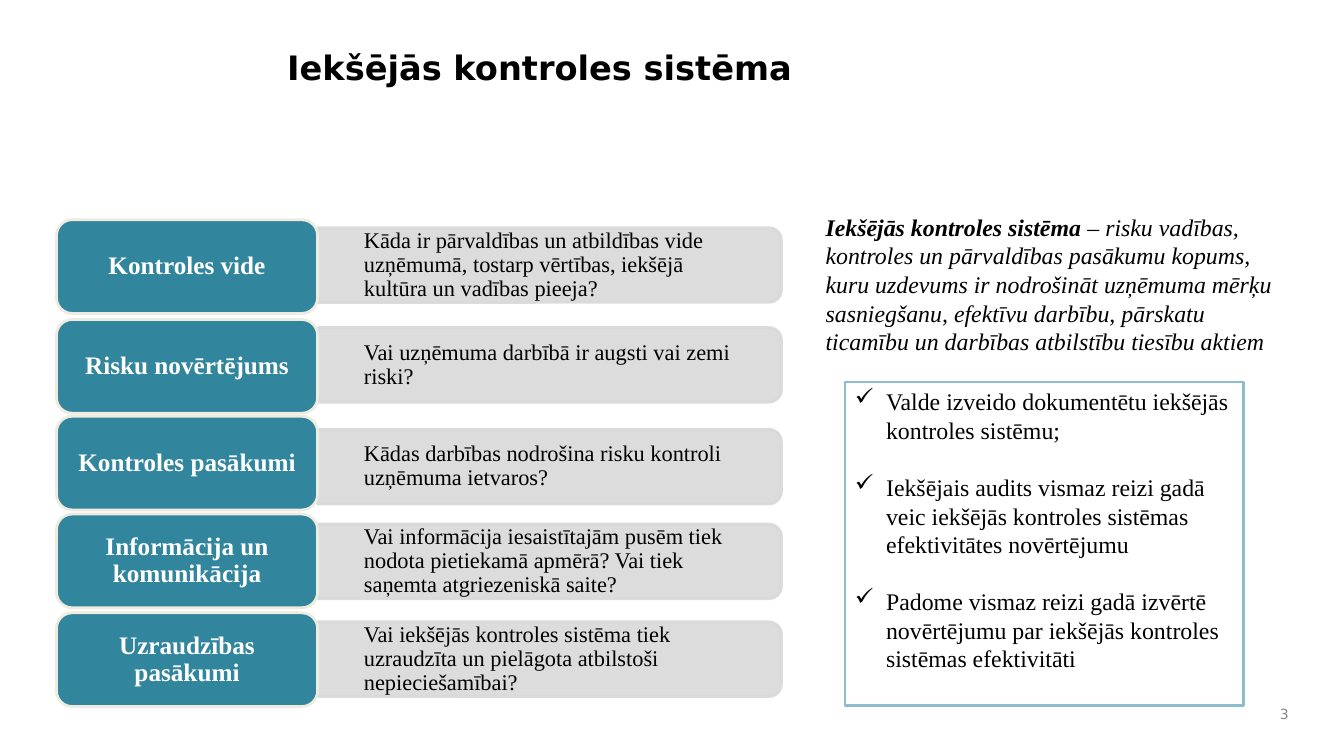
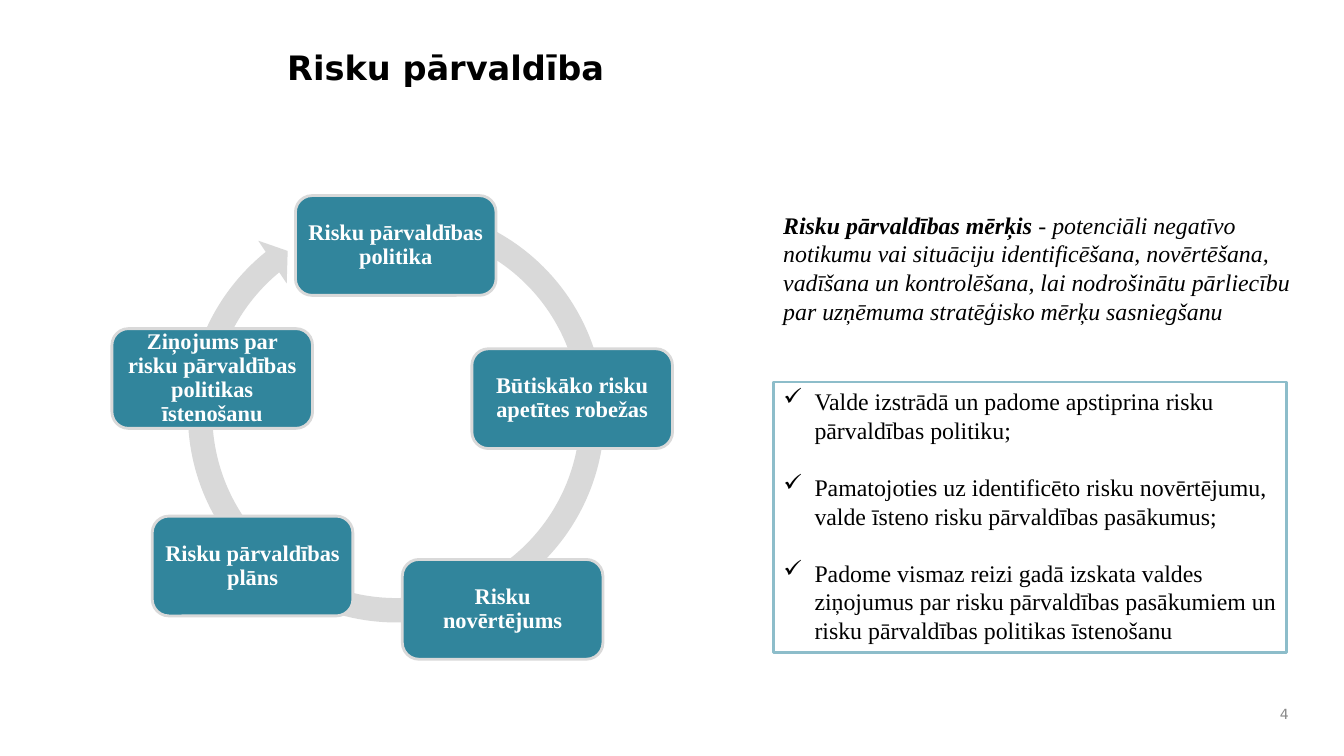
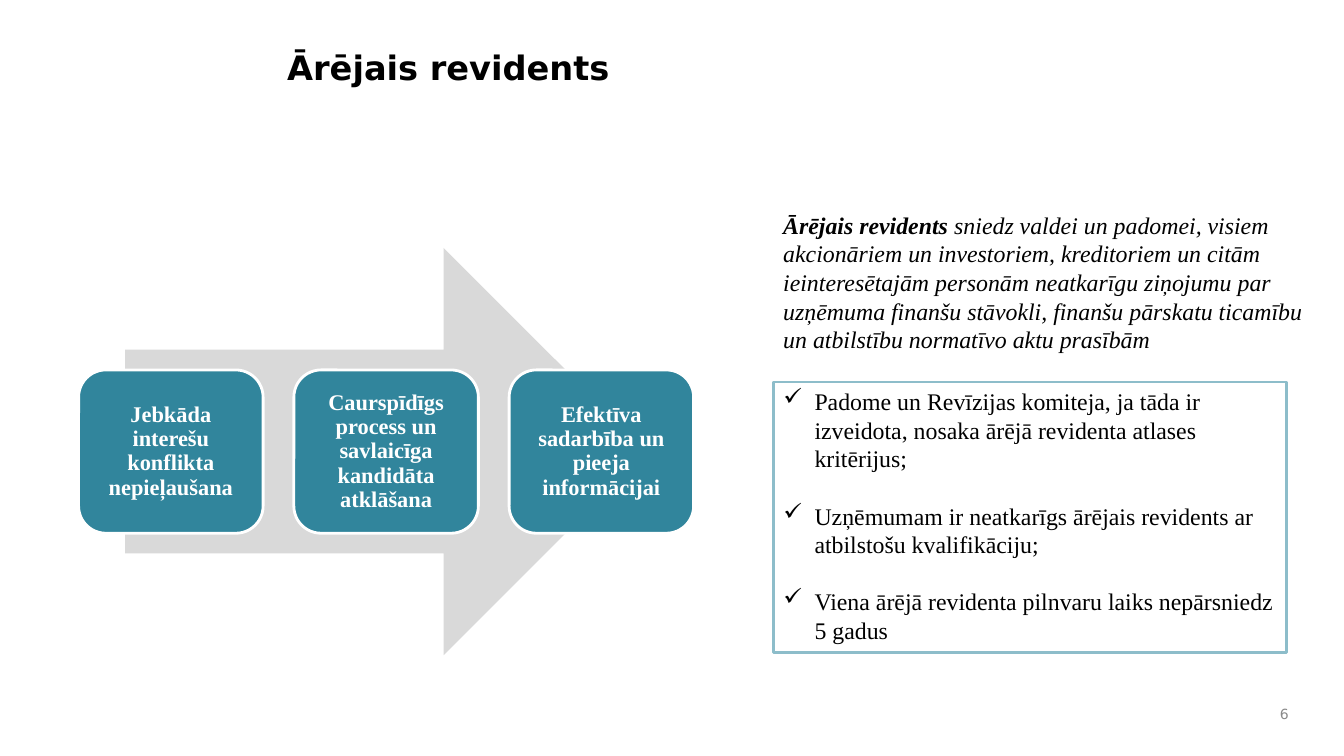
from lxml import etree
from pptx import Presentation
from pptx.dml.color import RGBColor
from pptx.enum.shapes import MSO_SHAPE as Shape
from pptx.enum.text import MSO_ANCHOR as Anchor, PP_ALIGN as Align
from pptx.oxml.ns import qn
from pptx.util import Emu, Pt

PX = 9144  # EMU per px, 100 px to the inch
TEAL, GREY, CREAM, WHITE, BLACK = "31859C", "D9D9D9", "EEECE1", "FFFFFF", "000000"
FRAME_BLUE, NUMBER_GREY = "8DBDCA", "898989"
SERIF, SANS = "Times New Roman", "DejaVu Sans"

SIDE_FRAME = (767, 379, 509, 268)
SLIDES = [
    {
        "title": "Iekšējās kontroles sistēma",
        "number": "3",
        "definition_box": (809, 206, 480, 153),
        "definition": ("Iekšējās kontroles sistēma",
                       " – risku vadības, kontroles un pārvaldības pasākumu kopums, kuru uzdevums ir "
                       "nodrošināt uzņēmuma mērķu sasniegšanu, efektīvu darbību, pārskatu ticamību un "
                       "darbības atbilstību tiesību aktiem"),
        "frame": (838, 379, 395, 321),
        "points": [
            "Valde izveido dokumentētu iekšējās kontroles sistēmu;",
            "Iekšējais audits vismaz reizi gadā veic iekšējās kontroles sistēmas efektivitātes novērtējumu",
            "Padome vismaz reizi gadā izvērtē novērtējumu par iekšējās kontroles sistēmas efektivitāti",
        ],
    },
    {
        "title": "Risku pārvaldība",
        "number": "4",
        "definition_box": (767, 204, 536, 125),
        "definition": ("Risku pārvaldības mērķis",
                       " - potenciāli negatīvo notikumu vai situāciju identificēšana, novērtēšana, "
                       "vadīšana un kontrolēšana, lai nodrošinātu pārliecību par uzņēmuma stratēģisko "
                       "mērķu sasniegšanu"),
        "frame": SIDE_FRAME,
        "points": [
            "Valde izstrādā un padome apstiprina risku pārvaldības politiku;",
            "Pamatojoties uz identificēto risku novērtējumu, valde īsteno risku pārvaldības pasākumus;",
            "Padome vismaz reizi gadā izskata valdes ziņojumus par risku pārvaldības pasākumiem un "
            "risku pārvaldības politikas īstenošanu",
        ],
    },
    {
        "title": "Ārējais revidents",
        "number": "6",
        "definition_box": (767, 204, 536, 153),
        "definition": ("Ārējais revidents",
                       " sniedz valdei un padomei, visiem akcionāriem un investoriem, kreditoriem un "
                       "citām ieinteresētajām personām neatkarīgu ziņojumu par uzņēmuma finanšu stāvokli, "
                       "finanšu pārskatu ticamību un atbilstību normatīvo aktu prasībām"),
        "frame": SIDE_FRAME,
        "points": [
            "Padome un Revīzijas komiteja, ja tāda ir izveidota, nosaka ārējā revidenta atlases kritērijus;",
            "Uzņēmumam ir neatkarīgs ārējais revidents ar atbilstošu kvalifikāciju;",
            "Viena ārējā revidenta pilnvaru laiks nepārsniedz 5 gadus",
        ],
    },
]

# label top, bar top, label, question
CONTROL_ROWS = [
    (218, 226, "Kontroles vide",
     "Kāda ir pārvaldības un atbildības vide uzņēmumā, tostarp vērtības, iekšējā kultūra un vadības pieeja?"),
    (317, 325, "Risku novērtējums", "Vai uzņēmuma darbībā ir augsti vai zemi riski?"),
    (413, 426, "Kontroles pasākumi", "Kādas darbības nodrošina risku kontroli uzņēmuma ietvaros?"),
    (510, 520, "Informācija un komunikācija",
     "Vai informācija iesaistītajām pusēm tiek nodota pietiekamā apmērā? Vai tiek saņemta atgriezeniskā saite?"),
    (608, 617, "Uzraudzības pasākumi",
     "Vai iekšējās kontroles sistēma tiek uzraudzīta un pielāgota atbilstoši nepieciešamībai?"),
]
CYCLE_STEPS = [
    (293, 194, "Risku pārvaldības politika"),
    (468, 346, "Būtiskāko risku apetītes robežas"),
    (399, 555, "Risku novērtējums"),
    (151, 512, "Risku pārvaldības plāns"),
    (111, 326, "Ziņojums par risku pārvaldības politikas īstenošanu"),
]
AUDITOR_PRINCIPLES = [
    "Jebkāda interešu konflikta nepieļaušana",
    "Caurspīdīgs process un savlaicīga kandidāta atklāšana",
    "Efektīva sadarbība un pieeja informācijai",
]


def px(*lengths):
    return [Emu(round(length * PX)) for length in lengths]


def paint(color_format, color, alpha=None):
    color_format.rgb = RGBColor.from_string(color)
    if alpha:
        # the colour element is the only child of the solid fill
        return {"val": str(alpha * 1000)}
    return None


def set_alpha(shape, percent):
    """Make the solid fill and the line of a shape partly transparent."""
    for color in shape.element.spPr.iter(qn("a:srgbClr")):
        etree.SubElement(color, qn("a:alpha"), val=str(percent * 1000))


def rgb(color):
    return RGBColor.from_string(color)


def add_shape(slide, kind, box, fill, line=None):
    shape = slide.shapes.add_shape(kind, *px(*box))
    shape.shadow.inherit = False
    shape.fill.solid()
    shape.fill.fore_color.rgb = rgb(fill)
    if line:
        shape.line.color.rgb = rgb(line)
        shape.line.width = Pt(2)
    else:
        shape.line.fill.background()
    return shape


def add_bullet(paragraph, indent=31):
    properties = paragraph._p.get_or_add_pPr()
    properties.set("marL", str(indent * PX))
    properties.set("indent", str(-indent * PX))
    etree.SubElement(properties, qn("a:buChar"), char="✓")


def write(shape, paragraphs, size=17, font=SERIF, color=BLACK, bold=False, italic=False, align=Align.LEFT,
          anchor=Anchor.TOP, margins=(10, 5, 10, 5), line_spacing=None, gap=0, bullets=False):
    """Fill a shape with paragraphs; a tuple is a bold lead followed by plain text."""
    frame = shape.text_frame
    frame.word_wrap = True
    frame.vertical_anchor = anchor
    frame.margin_left, frame.margin_top, frame.margin_right, frame.margin_bottom = px(*margins)
    for index, content in enumerate(paragraphs):
        paragraph = frame.paragraphs[0] if index == 0 else frame.add_paragraph()
        paragraph.alignment = align
        if line_spacing:
            paragraph.line_spacing = line_spacing
        if index and gap:
            paragraph.space_before = Pt(gap)
        if bullets:
            add_bullet(paragraph)
        parts = content if isinstance(content, tuple) else (content,)
        for position, part in enumerate(parts):
            run = paragraph.add_run()
            run.text = part
            run.font.name, run.font.size = font, Pt(size)
            run.font.bold = bold or (len(parts) > 1 and position == 0)
            run.font.italic = italic
            run.font.color.rgb = rgb(color)


def add_text(slide, box, paragraphs, **text_format):
    write(slide.shapes.add_textbox(*px(*box)), paragraphs, **text_format)


def add_label(slide, box, text, line, size=16, margins=(7, 7, 7, 7)):
    label = add_shape(slide, Shape.ROUNDED_RECTANGLE, box, TEAL, line)
    write(label, [text], size=size, color=WHITE, bold=True, align=Align.CENTER, anchor=Anchor.MIDDLE,
          margins=margins, line_spacing=0.9)


def add_common_parts(slide, content):
    add_text(slide, (275, 42, 667, 113), [content["title"]], size=24, font=SANS, bold=True)
    add_text(slide, (1227, 692, 61, 33), [content["number"]], size=10, font=SANS, color=NUMBER_GREY,
             align=Align.RIGHT, anchor=Anchor.MIDDLE)
    frame = add_shape(slide, Shape.RECTANGLE, content["frame"], WHITE, FRAME_BLUE)
    write(frame, content["points"], gap=20.4, bullets=True)
    add_text(slide, content["definition_box"], [content["definition"]], italic=True)


def draw_control_rows(slide):
    left, width, height = 315, 460, 74
    for label_top, bar_top, label, question in CONTROL_ROWS:
        # the bar is a tall shape turned on its side about its centre
        upright = (left + (width - height) / 2, bar_top - (width - height) / 2, height, width)
        bar = add_shape(slide, Shape.ROUND_2_SAME_RECTANGLE, upright, GREY, GREY)
        bar.rotation = 90
        set_alpha(bar, 90)
        add_text(slide, (left, bar_top, width - 4, height), [question], size=16, anchor=Anchor.MIDDLE,
                 margins=(46, 0, 27, 0), line_spacing=0.9)
        add_label(slide, (56, label_top, 259, 93), label, CREAM, size=18, margins=(7, 4, 7, 4))


def draw_risk_cycle(slide):
    ring = add_shape(slide, Shape.CIRCULAR_ARROW, (173, 191, 440, 440), GREY)
    for index, value in enumerate((0.055, 3.307, 138.533, 173.391, 0.058)):
        ring.adjustments[index] = value
    for left, top, step in CYCLE_STEPS:
        add_label(slide, (left, top, 199, 99), step, GREY)


def draw_auditor_arrow(slide):
    add_shape(slide, Shape.RIGHT_ARROW, (124, 246, 518, 404), GREY)
    first, last = 78, 505
    pitch = (last - first) / (len(AUDITOR_PRINCIPLES) - 1)
    for index, principle in enumerate(AUDITOR_PRINCIPLES):
        add_label(slide, (first + index * pitch, 367, 183, 162), principle, WHITE)


def main():
    presentation = Presentation()
    presentation.slide_width, presentation.slide_height = px(1333, 750)
    diagrams = (draw_control_rows, draw_risk_cycle, draw_auditor_arrow)
    for content, draw_diagram in zip(SLIDES, diagrams):
        slide = presentation.slides.add_slide(presentation.slide_layouts[6])
        add_common_parts(slide, content)
        draw_diagram(slide)
    presentation.save("out.pptx")


if __name__ == "__main__":
    main()
